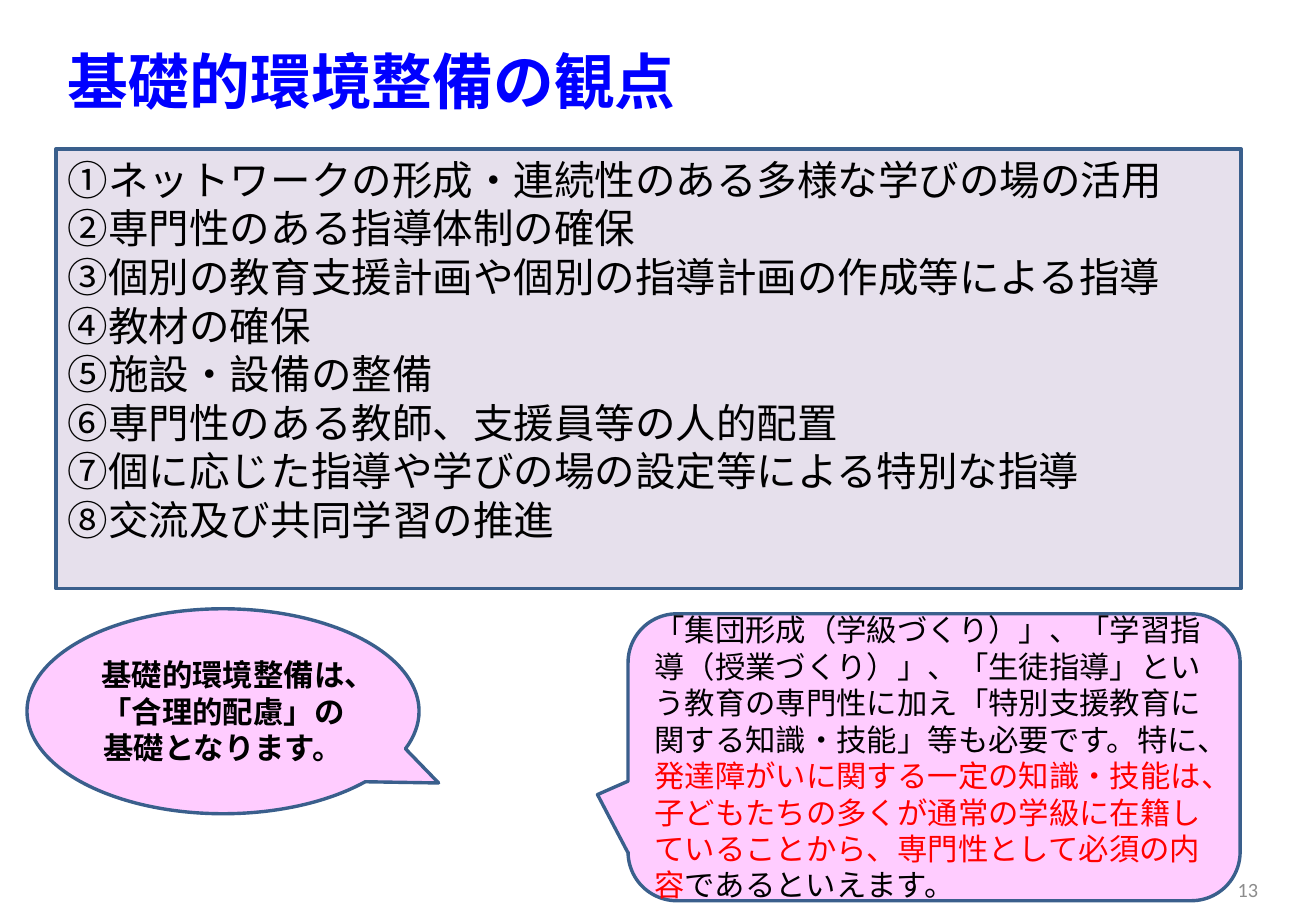
from dataclasses import dataclass

from lxml import etree
from pptx import Presentation
from pptx import util as u
from pptx.dml.color import RGBColor
from pptx.enum import shapes, text
from pptx.oxml.ns import qn


@dataclass(frozen=True)
class Theme:
    title: str = "0000FF"
    body: str = "000000"
    accent: str = "FF0000"
    muted: str = "8C8C8C"
    outline: str = "3A5F8C"
    panel: str = "E6E0EC"
    bubble: str = "FFCCFF"
    japanese: str = "Noto Sans CJK JP"
    latin: str = "Calibri"
    title_size: int = 36
    list_size: int = 24
    bubble_size: int = 18
    page_size: int = 12
    leading: float = 1.2
    line_width: int = 2


class SlideBuilder:
    PX = 914400 / 121.5

    def __init__(self, s, theme):
        self.s, self.theme = s, theme

    def box(self, at):
        return [round(v * self.PX) for v in at]

    def set_text(self, sp, paragraphs, size, font, bold=False,
                 align=text.PP_ALIGN.LEFT, anchor=text.MSO_ANCHOR.MIDDLE):
        """Each paragraph is a list of (text, colour) runs."""
        tf = sp.text_frame
        tf.word_wrap = True
        tf.vertical_anchor = anchor
        for i, runs in enumerate(paragraphs):
            p = tf.add_paragraph() if i else tf.paragraphs[0]
            p.alignment = align
            p.line_spacing = u.Pt(size * self.theme.leading)
            p.font.size, p.font.name, p.font.bold = u.Pt(size), font, bold
            latin = p.font._element.find(qn("a:latin"))
            ea = etree.Element(qn("a:ea"), typeface=self.theme.japanese)
            latin.addnext(ea)
            for words, color in runs:
                r = p.add_run()
                r.text = words
                r.font.color.rgb = RGBColor.from_string(color)

    def label(self, at, words, color, size, font, **style):
        sp = self.s.shapes.add_textbox(*self.box(at))
        self.set_text(sp, [[(words, color)]], size, font, **style)

    def panel(self, kind, at, fill, paragraphs, size, font, adj=(), **style):
        sp = self.s.shapes.add_shape(kind, *self.box(at))
        for i, value in enumerate(adj):
            sp.adjustments[i] = value
        sp.shadow.inherit = False
        sp.fill.solid()
        sp.fill.fore_color.rgb = RGBColor.from_string(fill)
        sp.line.color.rgb = RGBColor.from_string(self.theme.outline)
        sp.line.width = u.Pt(self.theme.line_width)
        self.set_text(sp, paragraphs, size, font, **style)


VIEWPOINTS = [
    "①ネットワークの形成・連続性のある多様な学びの場の活用",
    "②専門性のある指導体制の確保",
    "③個別の教育支援計画や個別の指導計画の作成等による指導",
    "④教材の確保",
    "⑤施設・設備の整備",
    "⑥専門性のある教師、支援員等の人的配置",
    "⑦個に応じた指導や学びの場の設定等による特別な指導",
    "⑧交流及び共同学習の推進",
]


def main():
    t = Theme()
    prs = Presentation()
    prs.slide_width, prs.slide_height = u.Inches(10.83), u.Inches(7.5)
    b = SlideBuilder(prs.slides.add_slide(prs.slide_layouts[6]), t)

    # Title
    b.label((56, 38, 1185, 85), "基礎的環境整備の観点", t.title,
            t.title_size, t.japanese, bold=True, anchor=text.MSO_ANCHOR.TOP)

    # Eight viewpoints
    b.panel(shapes.MSO_SHAPE.RECTANGLE, (56, 149, 1185, 440), t.panel,
            [[(line, t.body)] for line in VIEWPOINTS],
            t.list_size, t.japanese, anchor=text.MSO_ANCHOR.TOP)

    # Speech bubbles
    b.panel(shapes.MSO_SHAPE.OVAL_CALLOUT, (27, 609, 392, 205), t.bubble,
            [[("基礎的環境整備は、「合理的配慮」の基礎となります。", t.body)]],
            t.bubble_size, t.latin, adj=(0.55, 0.35), bold=True,
            align=text.PP_ALIGN.CENTER)
    b.panel(shapes.MSO_SHAPE.ROUNDED_RECTANGULAR_CALLOUT,
            (628, 614, 612, 287), t.bubble,
            [[("「集団形成（学級づくり）」、「学習指導（授業づくり）」、"
               "「生徒指導」という教育の専門性に加え「特別支援教育に関する"
               "知識・技能」等も必要です。特に、", t.body),
              ("発達障がいに関する一定の知識・技能は、子どもたちの多くが"
               "通常の学級に在籍していることから、専門性として必須の内容",
               t.accent),
              ("であるといえます。", t.body)]],
            t.bubble_size, t.latin, adj=(-0.55, 0.13, 0.17))

    # Page number
    b.label((963, 865, 307, 49), "13", t.muted, t.page_size, t.latin,
            align=text.PP_ALIGN.RIGHT)

    prs.save("out.pptx")


if __name__ == "__main__":
    main()
